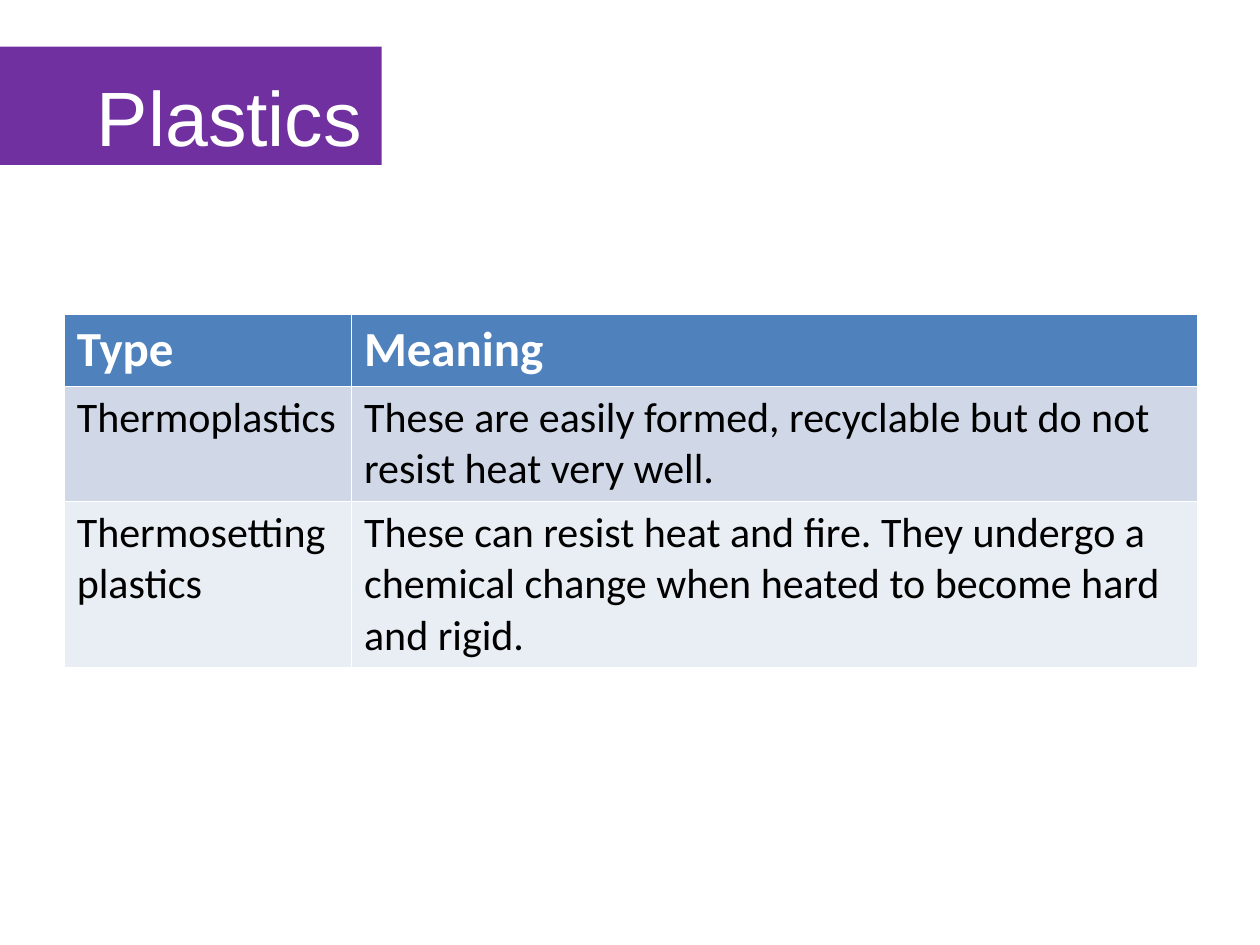
from dataclasses import dataclass

from pptx import Presentation
from pptx import util as u
from pptx.dml.color import RGBColor
from pptx.enum import shapes, text


@dataclass(frozen=True)
class Theme:
    banner: str = "7030A0"
    header: str = "4F81BD"
    bands: tuple[str, str] = ("D0D8E8", "E9EDF4")
    light: str = "FFFFFF"
    dark: str = "000000"
    title_font: str = "Arial"
    table_font: str = "Calibri"
    title_size: int = 44
    header_size: int = 28
    body_size: int = 24


@dataclass(frozen=True)
class Row:
    kind: str
    meaning: str
    height: float


THEME = Theme()
COLUMN_WIDTHS = (2.28, 6.72)
ROWS = (
    Row("Type", "Meaning", 0.56),
    Row("Thermoplastics",
        "These are easily formed, recyclable but do not resist heat very well.", 0.91),
    Row("Thermosetting plastics",
        "These can resist heat and fire. They undergo a chemical change "
        "when heated to become hard and rigid.", 1.32),
)


def set_text(tf, content: str, font: str, size: int, color: str, bold: bool = False) -> None:
    tf.text = content
    p = tf.paragraphs[0]
    p.font.name = font
    p.font.size = u.Pt(size)
    p.font.bold = bold
    p.font.color.rgb = RGBColor.from_string(color)


def set_fill(target, color: str) -> None:
    target.fill.solid()
    target.fill.fore_color.rgb = RGBColor.from_string(color)


def add_banner(s) -> None:
    sp = s.shapes.add_shape(shapes.MSO_SHAPE.RECTANGLE, u.Inches(0), u.Inches(0.37),
                            u.Inches(3.03), u.Inches(0.94))
    sp.shadow.inherit = False
    set_fill(sp, THEME.banner)
    sp.line.fill.background()


def add_title(s, content: str) -> None:
    sp = s.shapes.add_textbox(u.Inches(0.67), u.Inches(0.29), u.Inches(4.72), u.Inches(1.25))
    tf = sp.text_frame
    tf.word_wrap = True
    tf.vertical_anchor = text.MSO_ANCHOR.MIDDLE
    set_text(tf, content, THEME.title_font, THEME.title_size, THEME.light)


def add_types_table(s, rows: tuple[Row, ...]) -> None:
    table = s.shapes.add_table(
        len(rows), len(COLUMN_WIDTHS), u.Inches(0.51), u.Inches(2.49),
        u.Inches(sum(COLUMN_WIDTHS)), u.Inches(sum(row.height for row in rows))).table
    for column, width in zip(table.columns, COLUMN_WIDTHS):
        column.width = u.Inches(width)
    for i, row in enumerate(rows):
        table.rows[i].height = u.Inches(row.height)
        is_header = i == 0
        fill = THEME.header if is_header else THEME.bands[(i - 1) % 2]
        size = THEME.header_size if is_header else THEME.body_size
        color = THEME.light if is_header else THEME.dark
        for cell, content in zip(table.rows[i].cells, (row.kind, row.meaning)):
            set_fill(cell, fill)
            set_text(cell.text_frame, content, THEME.table_font, size, color, is_header)


def main() -> None:
    prs = Presentation()
    prs.slide_width, prs.slide_height = u.Inches(10), u.Inches(7.5)
    s = prs.slides.add_slide(prs.slide_layouts[6])
    add_banner(s)
    add_types_table(s, ROWS)
    add_title(s, "Plastics")
    prs.save("out.pptx")


if __name__ == "__main__":
    main()
